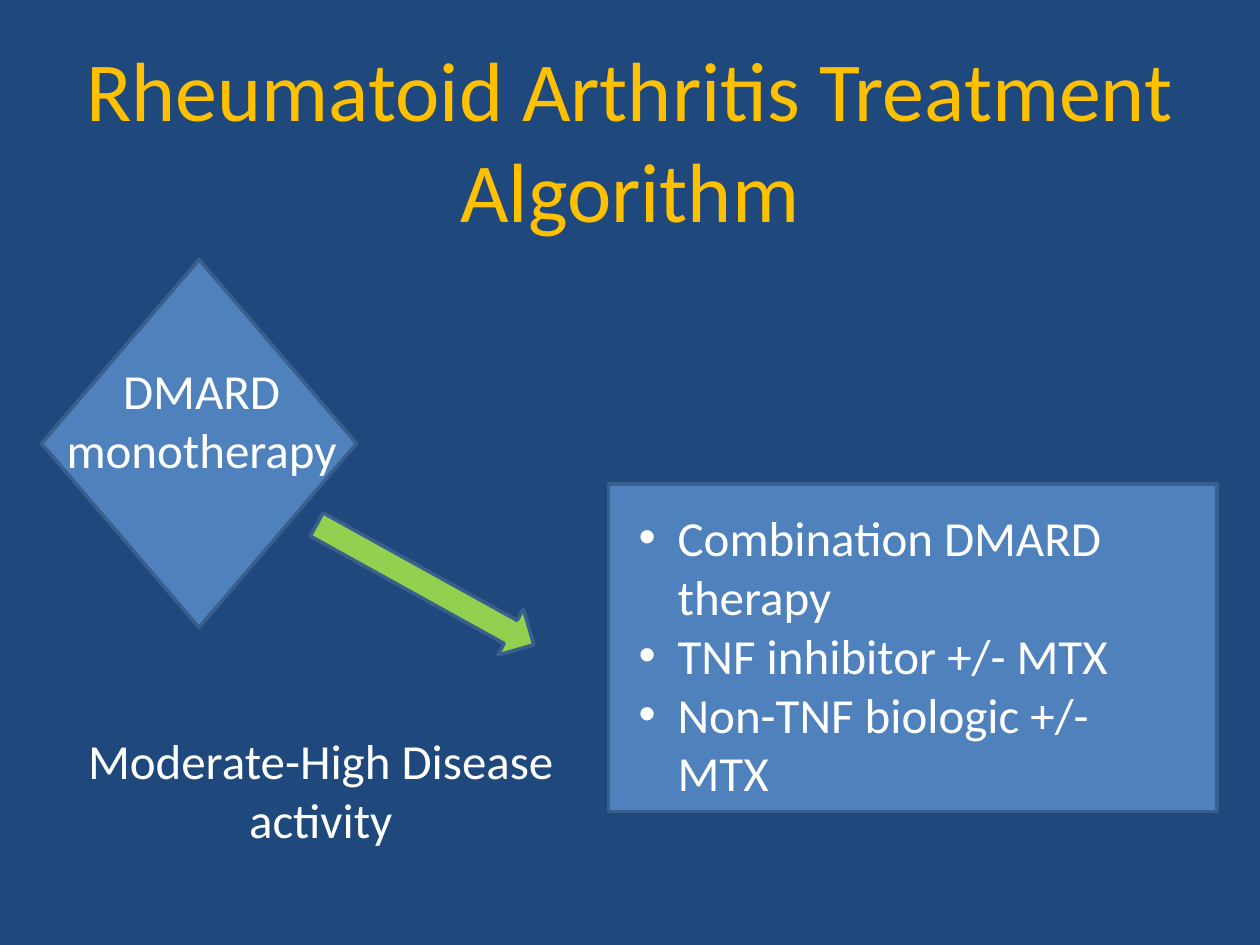
import pptx
import pptx.util
import pptx.dml.color
import pptx.enum.shapes
import pptx.enum.text
from dataclasses import dataclass
from lxml import etree

Inches, Pt = pptx.util.Inches, pptx.util.Pt
RGB = pptx.dml.color.RGBColor.from_string
MSO = pptx.enum.shapes.MSO_SHAPE
ALIGN = pptx.enum.text.PP_ALIGN


@dataclass(frozen=True)
class Theme:
    font: str = "Calibri"
    background: str = "1F497D"
    title: str = "FFC000"
    body: str = "FFFFFF"
    box: str = "4F81BD"
    arrow: str = "92D050"
    outline: str = "3A5F8C"
    title_size: int = 48
    body_size: int = 28


theme = Theme()


def add_text(s, box, lines, color=theme.body, size=theme.body_size, align=ALIGN.CENTER):
    tf = s.shapes.add_textbox(*map(Inches, box)).text_frame
    tf.word_wrap = True
    tf.text = "\n".join(lines)
    for p in tf.paragraphs:
        p.alignment = align
        for r in p.runs:
            r.font.name = theme.font
            r.font.size = Pt(size)
            r.font.color.rgb = RGB(color)
    return tf


def add_block(s, kind, box, fill):
    sp = s.shapes.add_shape(kind, *map(Inches, box))
    sp.shadow.inherit = False
    sp.fill.solid()
    sp.fill.fore_color.rgb = RGB(fill)
    sp.line.color.rgb = RGB(theme.outline)
    sp.line.width = Pt(2)
    return sp


prs = pptx.Presentation()
prs.slide_width, prs.slide_height = Inches(10), Inches(7.5)
s = prs.slides.add_slide(prs.slide_layouts[6])
s.background.fill.solid()
s.background.fill.fore_color.rgb = RGB(theme.background)

add_text(s, (0, 0.25, 10, 1.72), ["Rheumatoid Arthritis Treatment Algorithm"],
         theme.title, theme.title_size)

# First-line therapy and the step up from it
add_block(s, MSO.DIAMOND, (0.33, 2.06, 2.5, 2.92), theme.box)
arrow = add_block(s, MSO.RIGHT_ARROW, (2.39, 4.43, 1.97, 0.42), theme.arrow)
arrow.rotation = 29
add_text(s, (0.42, 5.75, 4.25, 1.04), ["Moderate-High Disease activity"])
add_text(s, (0.35, 2.81, 2.5, 1.04), ["DMARD monotherapy"])

# Next-line options
add_block(s, MSO.RECTANGLE, (4.83, 3.84, 4.83, 2.6), theme.box)
options = add_text(
    s, (4.97, 3.98, 4.28, 2.46),
    ["Combination DMARD therapy", "TNF inhibitor +/- MTX", "Non-TNF biologic +/- MTX"],
    align=ALIGN.LEFT)
for p in options.paragraphs:
    pPr = p._p.get_or_add_pPr()
    pPr.set("marL", str(Inches(0.31)))
    pPr.set("indent", str(Inches(-0.31)))
    etree.SubElement(pPr, pptx.oxml.ns.qn("a:buFont"), typeface="Arial")
    etree.SubElement(pPr, pptx.oxml.ns.qn("a:buChar"), char="•")

prs.save("out.pptx")
